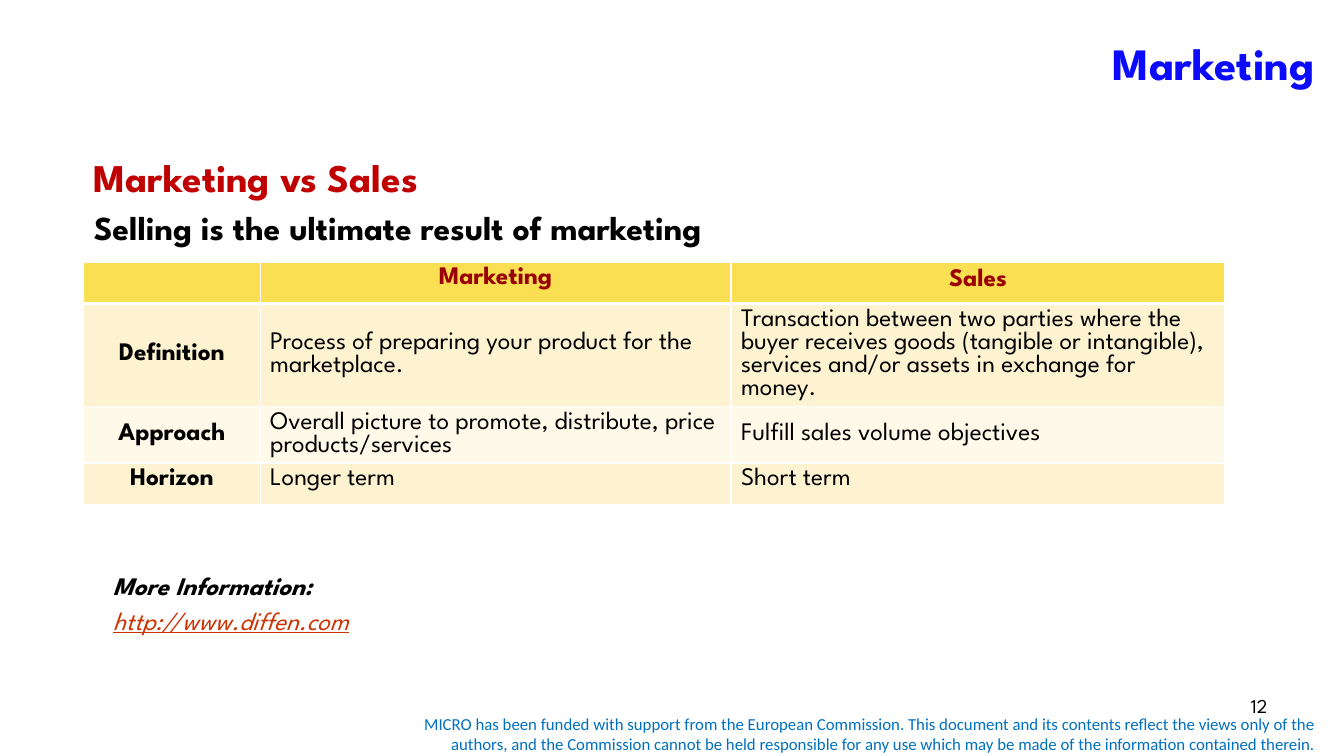
"""Build the Marketing vs Sales comparison slide."""
from dataclasses import dataclass

from lxml.etree import SubElement
from pptx import Presentation
from pptx.dml.color import RGBColor
from pptx.enum.text import MSO_ANCHOR as Anchor, MSO_AUTO_SIZE as AutoSize, PP_ALIGN as Align
from pptx.oxml.ns import qn
from pptx.util import Inches, Pt


@dataclass(frozen=True)
class Theme:
    font: str = "League Spartan"
    footer_font: str = "Calibri"
    title: str = "0B0AFD"
    heading: str = "C00000"
    text: str = "000000"
    link: str = "CC3300"
    footer: str = "0070C0"
    header_text: str = "990000"
    header_fill: str = "FBDF53"
    bands: tuple[str, str] = ("FDF3D1", "FEF9E9")
    border: str = "FFFFFF"
    title_size: int = 32
    heading_size: int = 28
    claim_size: int = 24
    text_size: int = 18
    number_size: int = 14
    footer_size: int = 12


@dataclass(frozen=True)
class Box:
    left: float
    top: float
    width: float
    height: float

    def lengths(self) -> list[Inches]:
        """Return the box as slide lengths."""
        return [Inches(side) for side in (self.left, self.top, self.width, self.height)]


@dataclass(frozen=True)
class Row:
    height: float
    texts: tuple[str, str, str]
    anchors: tuple[Anchor, Anchor, Anchor]


THEME = Theme()
TOP, MIDDLE = Anchor.TOP, Anchor.MIDDLE
COLUMN_WIDTHS = (1.75, 4.67, 4.9)
ROWS = (
    Row(0.41, ("", "Marketing", "Sales"), (TOP, TOP, TOP)),
    Row(1.02, ("Definition", "Process of preparing your product for the marketplace.",
               "Transaction between two parties where the buyer receives goods (tangible or "
               "intangible), services and/or assets in exchange for money."),
        (MIDDLE, MIDDLE, MIDDLE)),
    Row(0.56, ("Approach", "Overall picture to promote, distribute, price products/services",
               "Fulfill sales volume objectives"),
        (MIDDLE, TOP, MIDDLE)),
    Row(0.41, ("Horizon", "Longer term", "Short term"), (TOP, TOP, TOP)),
)


def write(frame, text: str, *, size: int = THEME.text_size, color: str = THEME.text,
          font: str = THEME.font, bold: bool = False, italic: bool = False,
          underline: bool = False, align: Align = Align.LEFT, before: float = 0) -> None:
    """Add one formatted paragraph, filling the empty first one if present."""
    first = frame.paragraphs[0]
    paragraph = frame.add_paragraph() if first.runs else first
    properties = paragraph._p.get_or_add_pPr()
    properties.set("marL", "0")
    properties.set("indent", "0")
    SubElement(properties, qn("a:buNone"))
    paragraph.alignment = align
    paragraph.space_before = Pt(before)
    run = paragraph.add_run()
    run.text = text
    run.font.name, run.font.size = font, Pt(size)
    run.font.bold, run.font.italic, run.font.underline = bold, italic, underline
    run.font.color.rgb = RGBColor.from_string(color)


def place(shape, box: Box, anchor: Anchor = TOP):
    """Position a text shape and return its wrapping frame."""
    shape.left, shape.top, shape.width, shape.height = box.lengths()
    frame = shape.text_frame
    frame.word_wrap = True
    frame.auto_size = AutoSize.NONE
    frame.vertical_anchor = anchor
    return frame


def add_text(slide, box: Box, anchor: Anchor = TOP):
    """Add a text box and return its frame."""
    return place(slide.shapes.add_textbox(*box.lengths()), box, anchor)


def set_borders(cell, bottom: float) -> None:
    """Draw white borders with the given bottom width in points."""
    properties = cell._tc.get_or_add_tcPr()
    for side, width in (("L", 1), ("R", 1), ("T", 1), ("B", bottom)):
        line = SubElement(properties, qn(f"a:ln{side}"), w=str(Pt(width)))
        SubElement(SubElement(line, qn("a:solidFill")), qn("a:srgbClr"), val=THEME.border)


def add_comparison(slide, box: Box) -> None:
    """Add the table that compares marketing with sales."""
    table = slide.shapes.add_table(len(ROWS), len(COLUMN_WIDTHS), *box.lengths()).table
    for column, width in zip(table.columns, COLUMN_WIDTHS):
        column.width = Inches(width)
    for r, row in enumerate(ROWS):
        table.rows[r].height = Inches(row.height)
        header = r == 0
        fill = THEME.header_fill if header else THEME.bands[(r - 1) % 2]
        for c, (text, anchor) in enumerate(zip(row.texts, row.anchors)):
            cell = table.cell(r, c)
            set_borders(cell, 3 if header else 1)
            cell.fill.solid()
            cell.fill.fore_color.rgb = RGBColor.from_string(fill)
            cell.vertical_anchor = anchor
            label = header or c == 0
            if text:
                write(cell.text_frame, text, bold=label,
                      color=THEME.header_text if header else THEME.text,
                      align=Align.CENTER if label else Align.LEFT)
    sales = table.cell(0, 2)
    sales.margin_left = sales.margin_right = Inches(0.06)
    sales.margin_top = Inches(0.07)


def main() -> None:
    """Assemble and save the slide."""
    deck = Presentation()
    deck.slide_width, deck.slide_height = Inches(13.33), Inches(7.5)
    slide = deck.slides.add_slide(deck.slide_layouts[1])

    footer = add_text(slide, Box(3.75, 7.03, 9.4, 0.5), MIDDLE)
    write(footer, "MICRO has been funded with support from the European Commission. This document "
          "and its contents reflect the views only of the authors, and the Commission cannot be "
          "held responsible for any use which may be made of the information contained therein.",
          size=THEME.footer_size, color=THEME.footer, font=THEME.footer_font, align=Align.RIGHT)

    title = place(slide.shapes.title, Box(1.14, 0, 12, 1.25), MIDDLE)
    write(title, "Marketing", size=THEME.title_size, color=THEME.title, bold=True,
          align=Align.RIGHT)

    number = add_text(slide, Box(9.56, 6.83, 3.11, 0.52))
    write(number, "12", size=THEME.number_size, align=Align.RIGHT)

    body = place(slide.placeholders[1], Box(0.83, 1.47, 12, 1.1))
    write(body, "Marketing vs Sales", size=THEME.heading_size, color=THEME.heading, bold=True)
    write(body, "Selling is the ultimate result of marketing", size=THEME.claim_size,
          bold=True, before=4.8)

    add_comparison(slide, Box(0.83, 2.6, sum(COLUMN_WIDTHS), sum(row.height for row in ROWS)))

    more = add_text(slide, Box(1.02, 5.61, 11.81, 0.8))
    write(more, "More Information:", bold=True, italic=True)
    write(more, "http://www.diffen.com", color=THEME.link, italic=True, underline=True, before=3.6)

    deck.save("out.pptx")


if __name__ == "__main__":
    main()
